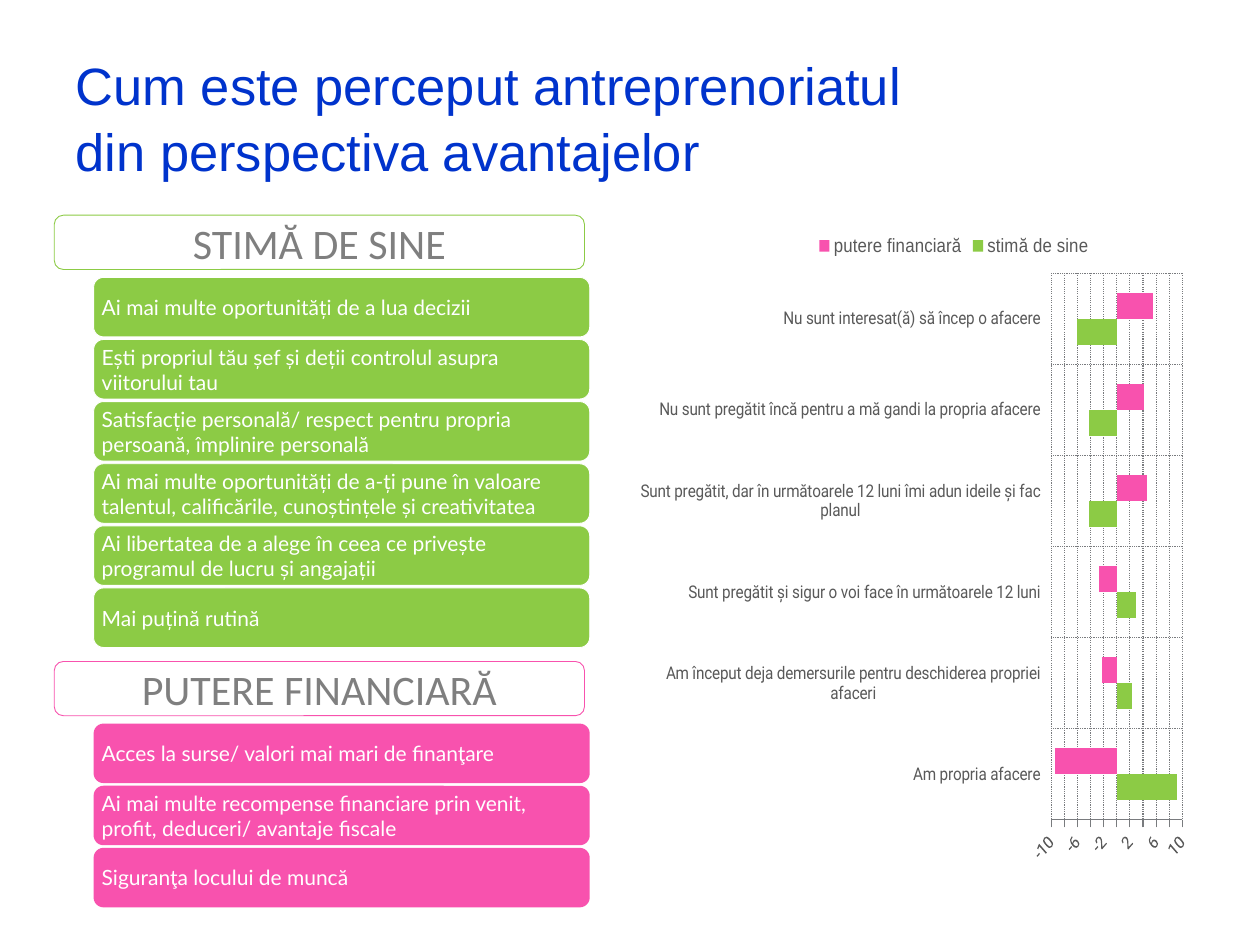
from dataclasses import dataclass

from lxml.etree import SubElement
from pptx import Presentation
from pptx.chart.axis import CategoryAxis, ValueAxis
from pptx.chart.data import CategoryChartData
from pptx.chart.plot import BarPlot
from pptx.dml.color import RGBColor
from pptx.enum.chart import XL_CHART_TYPE, XL_LEGEND_POSITION, XL_TICK_LABEL_POSITION, XL_TICK_MARK
from pptx.enum.dml import MSO_LINE
from pptx.enum.shapes import MSO_SHAPE
from pptx.enum.text import MSO_ANCHOR, PP_ALIGN
from pptx.oxml.ns import qn
from pptx.shapes.autoshape import Shape
from pptx.slide import Slide
from pptx.text.text import Font
from pptx.util import Pt

GREEN = "8CCB45"
PINK = "F852AE"
WHITE = "FFFFFF"
HEADING_GRAY = "7F7F7F"
LABEL_GRAY = "595959"
GRID_GRAY = "797B7E"
TITLE_BLUE = "0033CC"
ROW_PITCH = 35.5


@dataclass
class AdvantageGroup:
    heading: str
    color: str
    top: float
    advantages: list[str]
    outline: str | None = None


@dataclass
class ChartSeries:
    name: str
    color: str
    values: list[float]


GROUPS = [
    AdvantageGroup("STIMĂ DE SINE", GREEN, 123, [
        "Ai mai multe oportunități de a lua decizii",
        "Ești propriul tău șef și deții controlul asupra viitorului tau",
        "Satisfacție personală/ respect pentru propria persoană, împlinire personală",
        "Ai mai multe oportunități de a-ți pune în valoare talentul, calificările, cunoștințele și creativitatea",
        "Ai libertatea de a alege în ceea ce privește programul de lucru și angajații",
        "Mai puțină rutină",
    ], WHITE),
    AdvantageGroup("PUTERE FINANCIARĂ", PINK, 378, [
        "Acces la surse/ valori mai mari de finanţare",
        "Ai mai multe recompense financiare prin venit, profit, deduceri/ avantaje fiscale",
        "Siguranţa locului de muncă",
    ]),
]

CATEGORIES = [
    "Am propria afacere",
    "Am început deja demersurile pentru deschiderea propriei afaceri",
    "Sunt pregătit și sigur o voi face în următoarele 12 luni",
    "Sunt pregătit, dar în următoarele 12 luni îmi adun ideile și fac planul",
    "Nu sunt pregătit încă pentru a mă gandi la propria afacere",
    "Nu sunt interesat(ă) să încep o afacere",
]

SERIES = [
    ChartSeries("stimă de sine", GREEN, [9.2, 2.4, 3, -4.3, -4.2, -6]),
    ChartSeries("putere financiară", PINK, [-9.4, -2.3, -2.7, 4.6, 4.1, 5.6]),
]


def color_of(value: str) -> RGBColor:
    return RGBColor.from_string(value)


def format_font(font: Font, name: str, size: float, color: str) -> None:
    font.name = name
    font.size = Pt(size)
    font.color.rgb = color_of(color)


def add_title(slide: Slide) -> None:
    title = slide.shapes.title
    title.left, title.top, title.width, title.height = Pt(36), Pt(21.5), Pt(648), Pt(90)
    title.text_frame.text = "Cum este perceput antreprenoriatul\vdin perspectiva avantajelor"
    title.text_frame.vertical_anchor = MSO_ANCHOR.MIDDLE
    paragraph = title.text_frame.paragraphs[0]
    paragraph.alignment = PP_ALIGN.LEFT
    paragraph.line_spacing = 1.04
    for run in paragraph.runs:
        format_font(run.font, "Arial", 30, TITLE_BLUE)


def add_box(slide: Slide, text: str, left: float, top: float, width: float, height: float,
            fill: str | None, outline: str | None) -> Shape:
    shape = slide.shapes.add_shape(
        MSO_SHAPE.ROUNDED_RECTANGLE, Pt(left), Pt(top), Pt(width), Pt(height))
    shape.shadow.inherit = False
    if fill:
        shape.fill.solid()
        shape.fill.fore_color.rgb = color_of(fill)
    else:
        shape.fill.background()
    if outline:
        shape.line.color.rgb = color_of(outline)
        shape.line.width = Pt(0.5)
    else:
        shape.line.fill.background()
    shape.text_frame.text = text
    shape.text_frame.word_wrap = True
    shape.text_frame.vertical_anchor = MSO_ANCHOR.MIDDLE
    return shape


def add_group(slide: Slide, group: AdvantageGroup) -> None:
    heading = add_box(slide, group.heading, 31, group.top, 303, 31, None, group.color)
    paragraph = heading.text_frame.paragraphs[0]
    paragraph.alignment = PP_ALIGN.CENTER
    format_font(paragraph.runs[0].font, "Calibri", 24, HEADING_GRAY)
    for row, advantage in enumerate(group.advantages, start=1):
        box = add_box(slide, advantage, 53.5, group.top + row * ROW_PITCH, 283.5, 34,
                      group.color, group.outline)
        frame = box.text_frame
        frame.margin_left = frame.margin_right = Pt(3)
        frame.margin_top = frame.margin_bottom = Pt(1.5)
        paragraph = frame.paragraphs[0]
        paragraph.alignment = PP_ALIGN.LEFT
        format_font(paragraph.runs[0].font, "Lato", 12, WHITE)


def format_axis(axis: CategoryAxis | ValueAxis) -> None:
    axis.tick_label_position = XL_TICK_LABEL_POSITION.LOW
    axis.minor_tick_mark = XL_TICK_MARK.NONE
    format_font(axis.tick_labels.font, "Roboto", 10, LABEL_GRAY)
    axis.has_major_gridlines = True
    line = axis.major_gridlines.format.line
    line.color.rgb = color_of(GRID_GRAY)
    line.width = Pt(0.75)
    line.dash_style = MSO_LINE.ROUND_DOT


def place_plot(plot_area, **fractions: float) -> None:
    layout = plot_area.find(qn("c:layout"))
    if layout is None:
        layout = SubElement(plot_area, qn("c:layout"))
        plot_area.insert(0, layout)
    manual = SubElement(layout, qn("c:manualLayout"))
    settings = {"layoutTarget": "inner", "xMode": "edge", "yMode": "edge", **fractions}
    for tag, value in settings.items():
        SubElement(manual, qn(f"c:{tag}")).set("val", str(value))


def add_perception_chart(slide: Slide) -> None:
    data = CategoryChartData(number_format="General")
    data.categories = CATEGORIES
    for series in SERIES:
        data.add_series(series.name, series.values)
    chart = slide.shapes.add_chart(
        XL_CHART_TYPE.BAR_CLUSTERED, Pt(366), Pt(126), Pt(318), Pt(376.5), data).chart
    chart.has_title = False
    format_font(chart.font, "Arial", 18, "000000")
    chart.has_legend = True
    chart.legend.position = XL_LEGEND_POSITION.TOP
    chart.legend.include_in_layout = False
    format_font(chart.legend.font, "Arial", 11, LABEL_GRAY)

    plot: BarPlot = chart.plots[0]
    plot.gap_width = 150
    plot.vary_by_categories = False
    for drawn, series in zip(plot.series, SERIES):
        drawn.invert_if_negative = False
        drawn.format.fill.solid()
        drawn.format.fill.fore_color.rgb = color_of(series.color)

    format_axis(chart.category_axis)
    chart.category_axis.major_tick_mark = XL_TICK_MARK.NONE
    chart.category_axis.format.line.fill.background()

    value_axis = chart.value_axis
    format_axis(value_axis)
    value_axis.minimum_scale, value_axis.maximum_scale = -10, 10
    value_axis.major_unit = 2
    value_axis.major_tick_mark = XL_TICK_MARK.OUTSIDE
    value_axis.tick_labels.number_format = "0"
    value_axis.tick_labels.number_format_is_linked = False
    value_axis.format.line.color.rgb = color_of(GRID_GRAY)
    value_axis._element.find(qn("c:txPr")).find(qn("a:bodyPr")).set("rot", "-2700000")
    place_plot(chart._chartSpace.chart.plotArea, x=0.7, y=0.08, w=0.27, h=0.83)


def main() -> None:
    presentation = Presentation()
    presentation.slide_width, presentation.slide_height = Pt(720), Pt(540)
    slide = presentation.slides.add_slide(presentation.slide_layouts[5])
    add_title(slide)
    for group in GROUPS:
        add_group(slide, group)
    add_perception_chart(slide)
    presentation.save("out.pptx")


if __name__ == "__main__":
    main()
